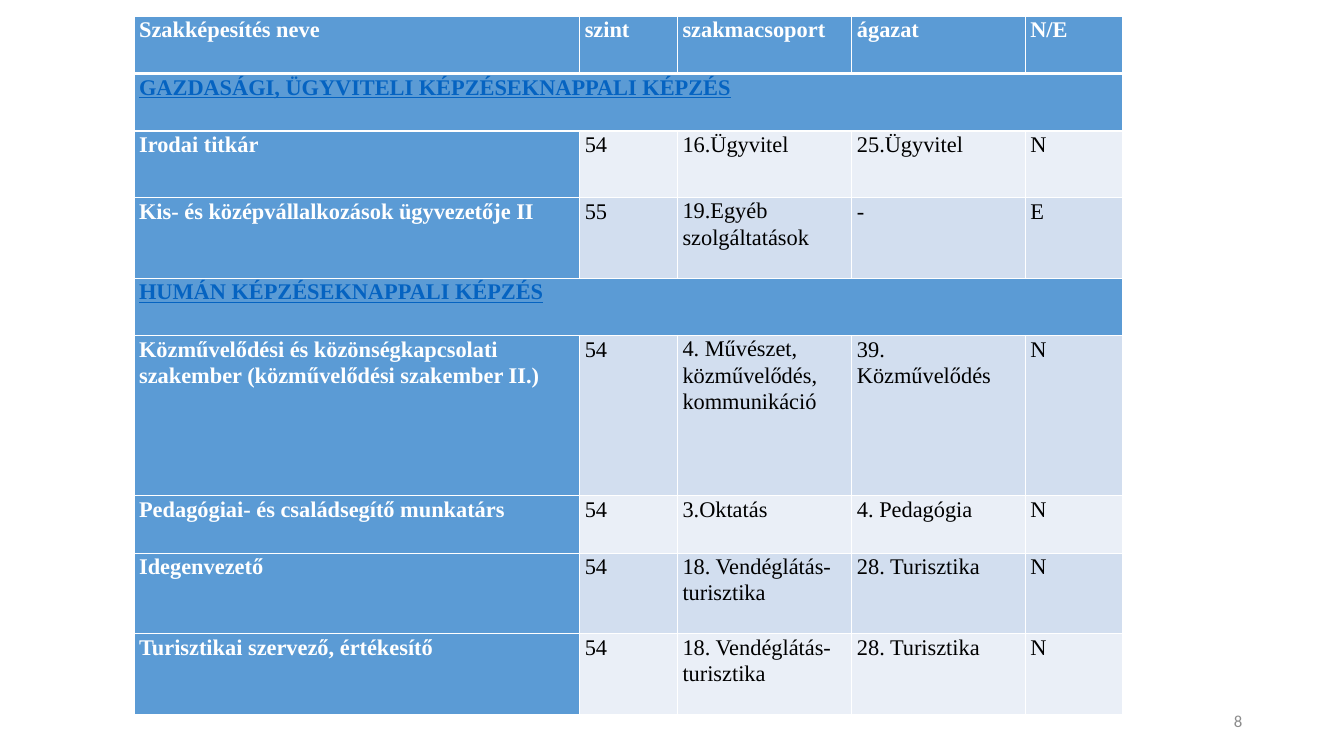
"""Build the slide with the table of vocational qualifications."""
from lxml.etree import SubElement
from pptx import Presentation
from pptx.dml.color import RGBColor
from pptx.enum.text import MSO_ANCHOR, PP_ALIGN
from pptx.oxml.ns import qn
from pptx.util import Inches, Pt

COLORS = {
    "white": "FFFFFF", "black": "000000", "gray": "8C8C8C", "link": "0563C1",
    "blue": "5B9BD5", "light": "EAEFF7", "dark": "D2DEEF",
}
MARGINS = {
    "margin_left": Inches(0.05), "margin_right": Inches(0.05),
    "margin_top": 0, "margin_bottom": 0,
}
BODY = {"name": "Times New Roman", "size": Pt(16), "bold": False}
HEADING = BODY | {"bold": True}
SECTION = HEADING | {"underline": True}
NUMBER = {"name": "Calibri", "size": Pt(12)}
NORMAL_SPACING = {"line_spacing": 1.07}
EXACT_SPACING = {"line_spacing": Pt(18.8), "space_before": Pt(2)}

COLUMN_WIDTHS = [4.42, 0.97, 1.73, 1.72, 0.97]
ROW_HEIGHTS = [0.57, 0.57, 0.66, 0.8, 0.57, 1.59, 0.57, 0.8, 0.8]
QUALIFICATIONS = [
    ["Szakképesítés neve", "szint", "szakmacsoport", "ágazat", "N/E"],
    ["GAZDASÁGI, ÜGYVITELI KÉPZÉSEKNAPPALI KÉPZÉS"],
    ["Irodai titkár", "54", "16.Ügyvitel", "25.Ügyvitel", "N"],
    ["Kis- és középvállalkozások ügyvezetője II", "55",
     "19.Egyéb szolgáltatások", "-", "E"],
    ["HUMÁN KÉPZÉSEKNAPPALI KÉPZÉS"],
    ["Közművelődési és közönségkapcsolati szakember (közművelődési szakember II.)",
     "54", "4. Művészet, közművelődés, kommunikáció", "39. Közművelődés", "N"],
    ["Pedagógiai- és családsegítő munkatárs", "54", "3.Oktatás", "4. Pedagógia", "N"],
    ["Idegenvezető", "54", "18. Vendéglátás-turisztika", "28. Turisztika", "N"],
    ["Turisztikai szervező, értékesítő", "54", "18. Vendéglátás-turisztika",
     "28. Turisztika", "N"],
]


def write(paragraph, text, font_format, color, paragraph_format):
    run = paragraph.add_run()
    run.text = text
    for target, values in ((run.font, font_format), (paragraph, paragraph_format)):
        for name, value in values.items():
            setattr(target, name, value)
    run.font.color.rgb = RGBColor.from_string(COLORS[color])


def draw_borders(cell, bottom_width):
    properties = cell._tc.get_or_add_tcPr()
    for side, width in (("L", 1), ("R", 1), ("T", 1), ("B", bottom_width)):
        border = SubElement(properties, qn(f"a:ln{side}"), w=str(Pt(width)))
        fill = SubElement(border, qn("a:solidFill"))
        SubElement(fill, qn("a:srgbClr"), val=COLORS["white"])


presentation = Presentation()
presentation.slide_width = Inches(13.33)
presentation.slide_height = Inches(7.5)
slide = presentation.slides.add_slide(presentation.slide_layouts[6])

page_number = slide.shapes.add_textbox(
    Inches(9.42), Inches(6.95), Inches(3), Inches(0.4)).text_frame
page_number.word_wrap = True
page_number.vertical_anchor = MSO_ANCHOR.MIDDLE
write(page_number.paragraphs[0], "8", NUMBER, "gray", {"alignment": PP_ALIGN.RIGHT})

qualifications = slide.shapes.add_table(
    len(ROW_HEIGHTS), len(COLUMN_WIDTHS), Inches(1.33), Inches(0.16),
    Inches(sum(COLUMN_WIDTHS)), Inches(sum(ROW_HEIGHTS))).table
for column, width in zip(qualifications.columns, COLUMN_WIDTHS):
    column.width = Inches(width)
for row, height in zip(qualifications.rows, ROW_HEIGHTS):
    row.height = Inches(height)

for row_index, entries in enumerate(QUALIFICATIONS):
    is_header = row_index == 0
    is_section = len(entries) == 1
    band = "dark" if row_index % 2 else "light"
    for column_index in range(len(COLUMN_WIDTHS)):
        cell = qualifications.cell(row_index, column_index)
        is_heading = is_header or is_section or column_index == 0
        draw_borders(cell, 3 if is_header else 1)
        cell.fill.solid()
        cell.fill.fore_color.rgb = RGBColor.from_string(
            COLORS["blue" if is_heading else band])
        for name, value in MARGINS.items():
            setattr(cell, name, value)
        if column_index >= len(entries):
            continue
        text = entries[column_index]
        if is_section:
            font_format, color = SECTION, "link"
        elif is_heading:
            font_format, color = HEADING, "white"
        else:
            font_format, color = BODY, "black"
        is_exact = not is_heading and (column_index == 2 or text == "25.Ügyvitel")
        write(cell.text_frame.paragraphs[0], text, font_format, color,
              EXACT_SPACING if is_exact else NORMAL_SPACING)
    if is_section:
        qualifications.cell(row_index, 0).merge(
            qualifications.cell(row_index, len(COLUMN_WIDTHS) - 1))

presentation.save("out.pptx")
